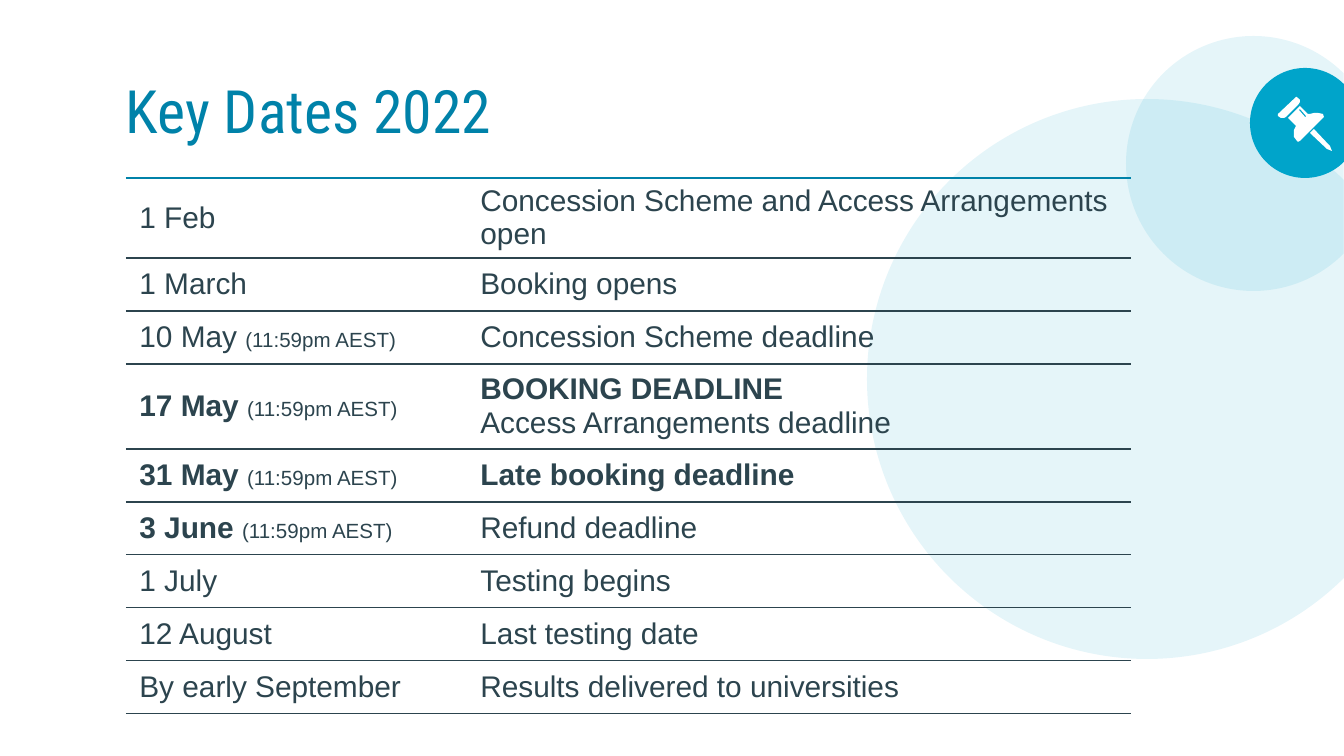
import pptx
import pptx.util
import pptx.dml.color
import pptx.enum.shapes
import pptx.enum.text
import pptx.oxml
import pptx.oxml.ns

PX = 914400 / 134.4
INK = pptx.dml.color.RGBColor(0x2C, 0x44, 0x4E)
TEAL = pptx.dml.color.RGBColor(0x00, 0x82, 0xA9)
CYAN = pptx.dml.color.RGBColor(0x00, 0xA4, 0xCA)
WHITE = pptx.dml.color.RGBColor(0xFF, 0xFF, 0xFF)
NOTE = "(11:59pm AEST)"
MIDDLE = pptx.enum.text.MSO_ANCHOR.MIDDLE


def px(n):
    return pptx.util.Emu(round(n * PX))


def add_border(cell, side, color):
    ns = pptx.oxml.ns.nsdecls("a")
    if color is None:
        xml = f'<a:{side} {ns} w="0"><a:noFill/></a:{side}>'
    else:
        xml = (f'<a:{side} {ns} w="12700"><a:solidFill><a:srgbClr val="{color}"/>'
               f'</a:solidFill></a:{side}>')
    cell._tc.get_or_add_tcPr().append(pptx.oxml.parse_xml(xml))


prs = pptx.Presentation()
prs.slide_width, prs.slide_height = px(1344), px(756)
s = prs.slides.add_slide(prs.slide_layouts[5])

title = s.shapes.title
title.left, title.top, title.width, title.height = px(126), px(59), px(970), px(110)
tf = title.text_frame
tf.text = "Key Dates 2022"
tf.margin_left = tf.margin_top = tf.margin_right = tf.margin_bottom = 0
tf.vertical_anchor = MIDDLE
p = tf.paragraphs[0]
p.alignment = pptx.enum.text.PP_ALIGN.LEFT
p.line_spacing = 0.9
font = p.runs[0].font
font.name, font.size, font.color.rgb = "Roboto Condensed", pptx.util.Pt(32), TEAL

for left, top, size, alpha in [(867, 99, 560, 10), (1126, 36, 255, 10), (1250, 68, 110, 100)]:
    sp = s.shapes.add_shape(pptx.enum.shapes.MSO_SHAPE.CHORD, px(left), px(top), px(size), px(size))
    sp.adjustments[0], sp.adjustments[1] = 27, 189
    sp.shadow.inherit = False
    sp.fill.solid()
    sp.fill.fore_color.rgb = CYAN
    sp.line.fill.background()
    if alpha < 100:
        clr = sp._element.spPr.find(".//" + pptx.oxml.ns.qn("a:srgbClr"))
        clr.append(pptx.oxml.parse_xml(
            f'<a:alpha {pptx.oxml.ns.nsdecls("a")} val="{alpha * 1000}"/>'))

rows = [
    ("1 Feb", False, "", [("Concession Scheme and Access Arrangements open", False)]),
    ("1 March", False, "", [("Booking opens", False)]),
    ("10 May ", False, NOTE, [("Concession Scheme deadline", False)]),
    ("17 May ", True, NOTE, [("BOOKING DEADLINE", True), ("Access Arrangements deadline", False)]),
    ("31 May ", True, NOTE, [("Late booking deadline", True)]),
    ("3 June ", True, NOTE, [("Refund deadline", False)]),
    ("1 July", False, "", [("Testing begins", False)]),
    ("12 August", False, "", [("Last testing date", False)]),
    ("By early September", False, "", [("Results delivered to universities", False)]),
]
table = s.shapes.add_table(len(rows), 2, px(126), px(178), px(1005), px(509)).table
table.first_row = table.horz_banding = False
table.columns[0].width, table.columns[1].width = px(341), px(664)

for i, (date, bold, note, events) in enumerate(rows):
    table.rows[i].height = px(53 if len(events) == 1 else 85)
    for cell, lines in zip(table.rows[i].cells, [[(date, bold)], events]):
        cell.vertical_anchor = MIDDLE
        for side, color in [("lnL", None), ("lnR", None), ("lnT", INK if i else TEAL), ("lnB", INK)]:
            add_border(cell, side, color)
        cell.fill.background()
        tf = cell.text_frame
        tf.text = "\n".join(text for text, _ in lines)
        for p, (_, heavy) in zip(tf.paragraphs, lines):
            r = p.runs[0]
            r.font.size, r.font.bold = pptx.util.Pt(16), heavy
    if note:
        r = table.cell(i, 0).text_frame.paragraphs[0].add_run()
        r.text = note
        r.font.size, r.font.bold = pptx.util.Pt(11), False
    for cell in table.rows[i].cells:
        for p in cell.text_frame.paragraphs:
            for r in p.runs:
                r.font.name, r.font.color.rgb = "Arial", INK

needle = [(1314, 129), (1330, 146), (1332, 151), (1327, 149), (1310, 133)]
cap = [(1297, 97), (1300, 100), (1300, 102), (1298, 105), (1286, 117), (1284, 118),
       (1281, 118), (1278, 116), (1278, 114), (1296, 97)]
body = [(1300, 106), (1308, 114), (1310, 114), (1314, 113), (1318, 113), (1323, 114),
        (1324, 117), (1323, 118), (1300, 141), (1298, 142), (1297, 141), (1294, 137),
        (1294, 130), (1296, 126), (1288, 118)]
slot = [(1300, 109), (1299, 110), (1305, 117), (1306, 117), (1306, 116)]
pin = s.shapes.add_group_shape()
for outlines in [[needle], [cap], [slot, body]]:
    fb = pin.shapes.build_freeform(*outlines[0][0], scale=PX)
    fb.add_line_segments(outlines[0][1:])
    for outline in outlines[1:]:
        fb.move_to(*outline[0])
        fb.add_line_segments(outline[1:])
    sp = fb.convert_to_shape()
    sp.shadow.inherit = False
    sp.fill.solid()
    sp.fill.fore_color.rgb = WHITE
    sp.line.fill.background()

prs.save("out.pptx")
